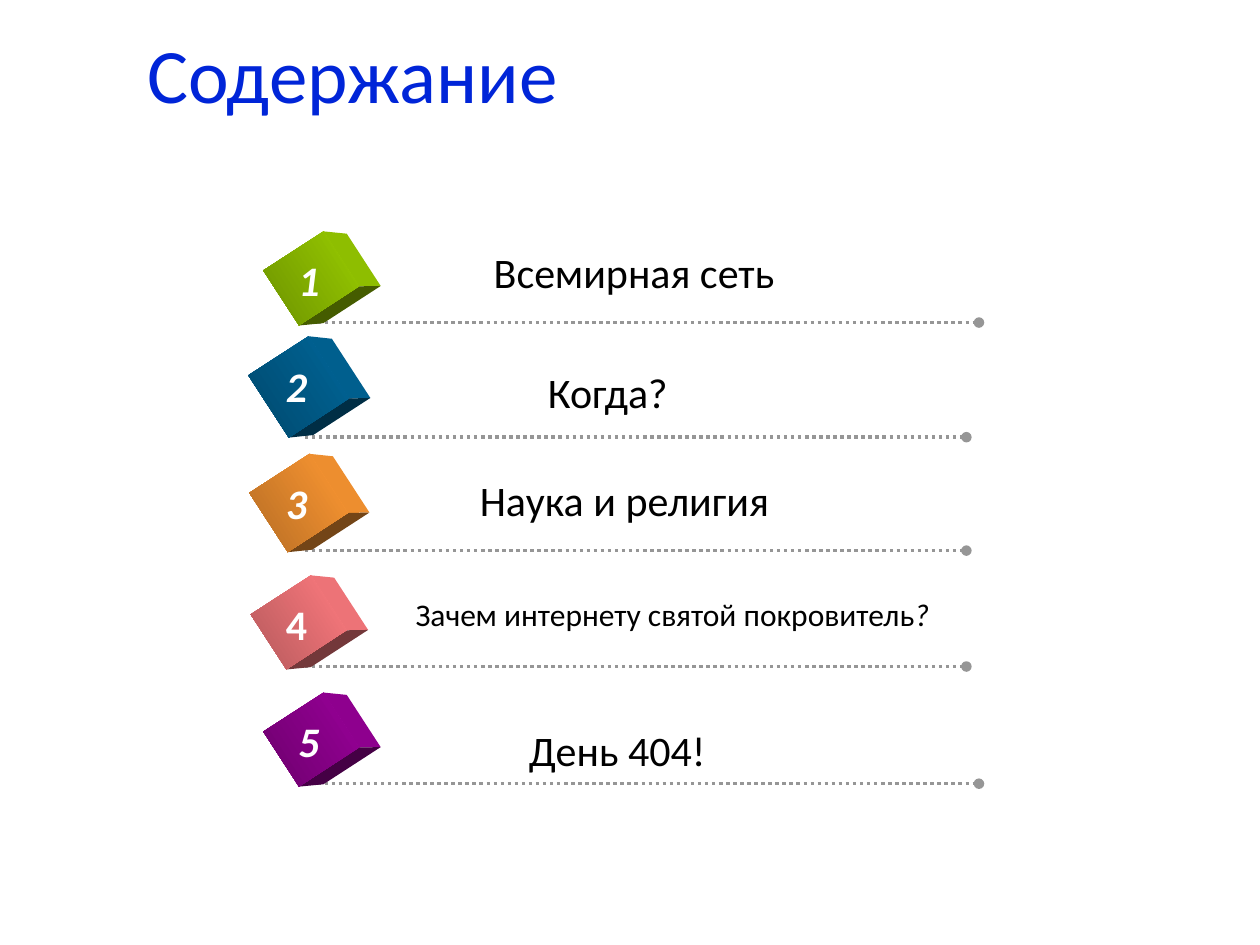
import dataclasses
import math

import pptx
import pptx.dml.color
import pptx.enum.dml
import pptx.enum.shapes
import pptx.enum.text
import pptx.oxml
import pptx.oxml.ns
import pptx.util


@dataclasses.dataclass(frozen=True)
class Theme:
    font: str = "Calibri"
    title_color: str = "0025D8"
    text_color: str = "000000"
    number_color: str = "FFFFFF"
    line_color: str = "969696"
    title_size: int = 44
    text_size: int = 24
    small_size: int = 18
    line_width: int = 2


@dataclasses.dataclass(frozen=True)
class Item:
    runs: tuple  # (text, italic) pairs
    text_box: tuple  # left, top, width in grid cells
    line_top: float
    cube_width: float
    colors: tuple  # light and dark end of the cube face
    indent: float = 0
    size: int = Theme.text_size
    number_italic: bool = True


THEME = Theme()
COLUMNS, ROWS = 10, 7.5
CELL = pptx.util.Inches(1)  # one grid cell, columns and rows alike
LINE_LEFT, LINE_LENGTH = 2.42, 5.25
BOX_HEIGHT = 0.51
CUBE_WIDTH, CUBE_HEIGHT, CUBE_TURN = 0.52, 0.57, 57
CUBE_DEPTH, FAR_SCALE = 0.19, 0.95

ITEMS = (
    Item((("Всемирная сеть", False),), (3.82, 1.91, 3.19), 2.56, CUBE_WIDTH,
         ("99CC00", "6D9200"), indent=0.1),
    Item((("Когда?", False),), (4.25, 2.86, 1.24), 3.47, 0.59,
         ("006699", "00496D")),
    Item((("Наука и религия", False),), (3.71, 3.72, 3.64), 4.37, 0.56,
         ("FF9933", "B66D24")),
    Item((("Зачем интернету святой покровитель", False), ("?", True)),
         (3.2, 4.67, 6.8), 5.29, CUBE_WIDTH, ("FF7C80", "B6595C"),
         size=THEME.small_size, number_italic=False),
    Item((("День 404!", False),), (4.1, 5.7, 2.1), 6.22, CUBE_WIDTH,
         ("990099", "6D006D"), indent=0.1),
)


def cells(*values):
    return [pptx.util.Emu(round(value * CELL)) for value in values]


def rgb(code, shade=1):
    channels = pptx.dml.color.RGBColor.from_string(code)
    return pptx.dml.color.RGBColor(*(round(part * shade) for part in channels))


def add_run(para, text, color, **formats):
    span = para.add_run()
    span.text = text
    span.font.color.rgb = rgb(color)
    formats["size"] = pptx.util.Pt(formats["size"])
    for name, value in {"name": THEME.font, **formats}.items():
        setattr(span.font, name, value)


def add_text(group, at, runs, color, wrap=True, bold=False, size=THEME.text_size):
    box = group.shapes.add_textbox(*cells(*at))
    box.text_frame.word_wrap = wrap
    for text, italic in runs:
        add_run(box.text_frame.paragraphs[0], text, color,
                size=size, bold=bold, italic=italic)


def add_dotted_line(group, left, top):
    line = group.shapes.add_connector(
        pptx.enum.shapes.MSO_CONNECTOR.STRAIGHT,
        *cells(left, top, left + LINE_LENGTH, top))
    line.line.color.rgb = rgb(THEME.line_color)
    line.line.width = pptx.util.Pt(THEME.line_width)
    line.line.dash_style = pptx.enum.dml.MSO_LINE.ROUND_DOT
    # Round end mark, no shadow
    tail = pptx.oxml.parse_xml(
        f'<a:tailEnd {pptx.oxml.ns.nsdecls("a")} type="oval"/>')
    line.line._get_or_add_ln().append(tail)
    line._element.spPr.append(pptx.oxml.parse_xml(
        f'<a:effectLst {pptx.oxml.ns.nsdecls("a")}/>'))


def add_side(group, points, color):
    start, *rest = [cells(*point) for point in points]
    builder = group.shapes.build_freeform(*start)
    builder.add_line_segments(rest, close=True)
    side = builder.convert_to_shape()
    side.shadow.inherit = False
    side.fill.solid()
    side.fill.fore_color.rgb = color
    side.line.fill.background()


def add_cube(group, center_x, center_y, width, colors):
    turn = math.radians(CUBE_TURN)

    def corner(across, down, scale=1, shift=0):
        x, y = across * width / 2 * scale, down * CUBE_HEIGHT / 2 * scale
        return (center_x + shift + x * math.cos(turn) - y * math.sin(turn),
                center_y + x * math.sin(turn) + y * math.cos(turn))

    # Lit side and shaded side behind the face
    for start, end, shade in (((-1, -1), (1, -1), 0.93), ((1, -1), (1, 1), 0.45)):
        points = [corner(*start), corner(*start, FAR_SCALE, CUBE_DEPTH),
                  corner(*end, FAR_SCALE, CUBE_DEPTH), corner(*end)]
        add_side(group, points, rgb(colors[0], shade))

    # Front face
    face = group.shapes.add_shape(
        pptx.enum.shapes.MSO_SHAPE.RECTANGLE,
        *cells(center_x - width / 2, center_y - CUBE_HEIGHT / 2,
               width, CUBE_HEIGHT))
    face.rotation = CUBE_TURN
    face.shadow.inherit = False
    face.line.fill.background()
    face.fill.gradient()
    face.fill.gradient_angle = 270
    for stop, color in zip(face.fill.gradient_stops, colors):
        stop.color.rgb = rgb(color)


def add_item(page, number, item):
    group = page.shapes.add_group_shape()
    left, top = LINE_LEFT + item.indent, item.line_top
    extra = item.cube_width - CUBE_WIDTH  # larger cubes sit higher
    add_dotted_line(group, left, top)
    add_cube(group, left - 0.05, top - 0.35 - 0.7 * extra,
             item.cube_width, item.colors)
    add_text(group, (*item.text_box, BOX_HEIGHT), item.runs,
             THEME.text_color, size=item.size)
    add_text(group, (left - 0.25, top - 0.59 - extra, 0.37, BOX_HEIGHT),
             ((str(number), item.number_italic),),
             THEME.number_color, wrap=False, bold=True)


def add_title(page, text):
    title = page.shapes.title
    place = cells(1.07, 0.12, 7.01, 1)
    for name, value in zip(("left", "top", "width", "height"), place):
        setattr(title, name, value)
    title.text_frame.vertical_anchor = pptx.enum.text.MSO_ANCHOR.MIDDLE
    para = title.text_frame.paragraphs[0]
    para.alignment = pptx.enum.text.PP_ALIGN.LEFT
    para.line_spacing = 0.9
    add_run(para, text, THEME.title_color, size=THEME.title_size)


def main():
    deck = pptx.Presentation()
    deck.slide_width, deck.slide_height = cells(COLUMNS, ROWS)
    page = deck.slides.add_slide(deck.slide_layouts.get_by_name("Title Only"))
    add_title(page, "Содержание")
    for number, item in enumerate(ITEMS, start=1):
        add_item(page, number, item)
    deck.save("out.pptx")


if __name__ == "__main__":
    main()
